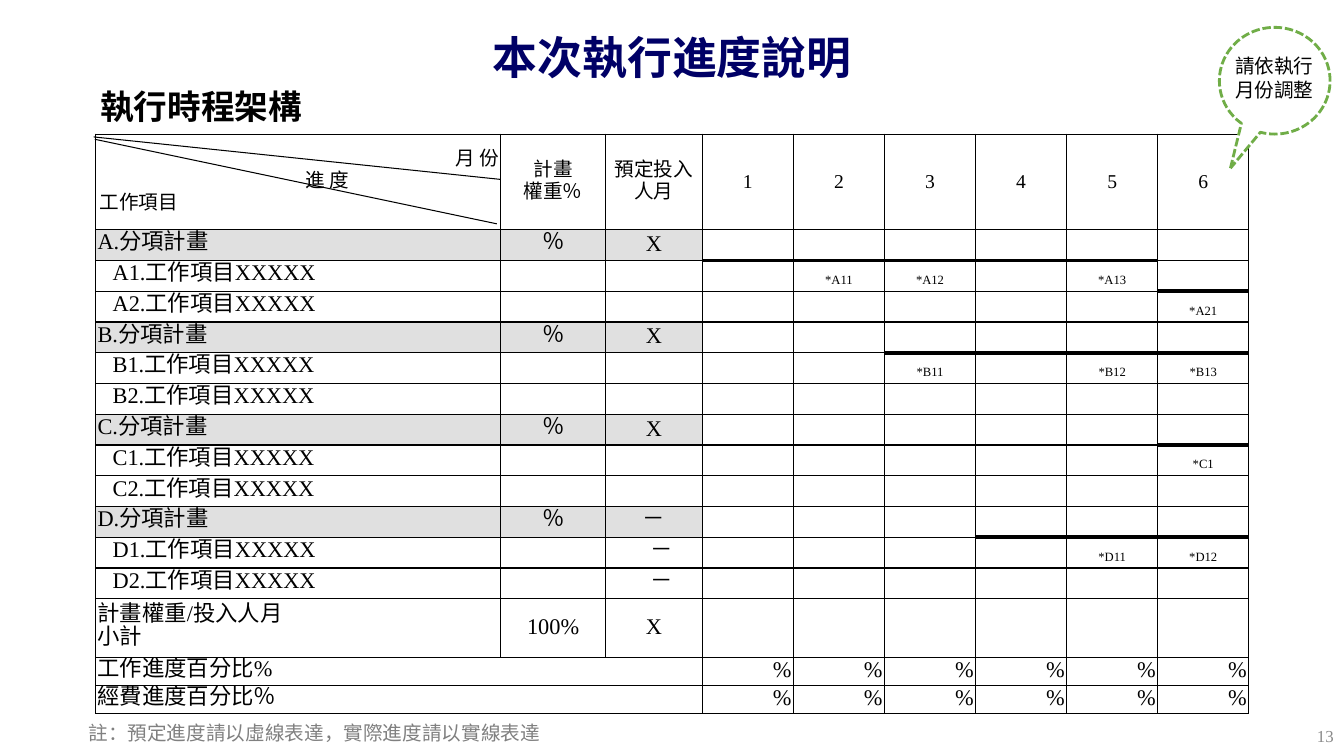
"""Build the project schedule progress slide."""
from dataclasses import dataclass, field

from lxml.etree import SubElement
from pptx import Presentation
from pptx.dml.color import RGBColor
from pptx.enum.dml import MSO_LINE_DASH_STYLE as Dash
from pptx.enum.shapes import MSO_CONNECTOR as Connector, MSO_SHAPE as Preset
from pptx.enum.text import MSO_ANCHOR as Anchor, PP_ALIGN as Align
from pptx.oxml.ns import qn
from pptx.util import Cm, Pt

BLACK = RGBColor(0x00, 0x00, 0x00)
WHITE = RGBColor(0xFF, 0xFF, 0xFF)
NAVY = RGBColor(0x00, 0x00, 0x66)
GREEN = RGBColor(0x70, 0xAD, 0x47)
NOTE_GRAY = RGBColor(0x80, 0x80, 0x80)
NUMBER_GRAY = RGBColor(0x89, 0x89, 0x89)
GROUP_GRAY = RGBColor(0xE0, 0xE0, 0xE0)
SERIF = "Times New Roman"
SANS = "Noto Sans CJK SC"
MONTHS = range(1, 7)
FIRST_MONTH_COLUMN = 3
ITEM_INDENT = 0.38


@dataclass
class Line:
    text: str
    size: float = 16
    align: Align = Align.CENTER
    indent: float = 0
    font: str = SERIF
    color: RGBColor = BLACK
    bold: bool = False


@dataclass
class Caption:
    left: float
    top: float
    width: float
    height: float
    lines: list[Line]
    anchor: Anchor = Anchor.MIDDLE
    wrap: bool = True


@dataclass
class WorkRow:
    label: str
    weight: str = ""
    effort: str = ""
    bar_months: range = range(0)
    checkpoints: dict[int, str] = field(default_factory=dict)


WORK_ROWS = [
    WorkRow("A.分項計畫", "％", "X", range(1, 6)),
    WorkRow("A1.工作項目XXXXX", bar_months=range(6, 7),
            checkpoints={2: "*A11", 3: "*A12", 5: "*A13"}),
    WorkRow("A2.工作項目XXXXX", checkpoints={6: "*A21"}),
    WorkRow("B.分項計畫", "％", "X", range(3, 7)),
    WorkRow("B1.工作項目XXXXX", checkpoints={3: "*B11", 5: "*B12", 6: "*B13"}),
    WorkRow("B2.工作項目XXXXX"),
    WorkRow("C.分項計畫", "％", "X", range(6, 7)),
    WorkRow("C1.工作項目XXXXX", checkpoints={6: "*C1"}),
    WorkRow("C2.工作項目XXXXX"),
    WorkRow("D.分項計畫", "％", "－", range(4, 7)),
    WorkRow("D1.工作項目XXXXX", effort="－", checkpoints={5: "*D11", 6: "*D12"}),
    WorkRow("D2.工作項目XXXXX", effort="－"),
]
SUBTOTAL_ROW = len(WORK_ROWS) + 1
PERCENT_ROWS = ["工作進度百分比%", "經費進度百分比％"]
COLUMN_WIDTHS = [10.21, 2.64, 2.44] + [13.77 / len(MONTHS)] * len(MONTHS)
ROW_HEIGHTS = [2.41] + [9.3 / len(WORK_ROWS)] * len(WORK_ROWS) + [1.47, 0.71, 0.71]

CAPTIONS = [
    Caption(1.7, 0.41, 30.48, 2.01, [Line("本次執行進度說明", 32, color=NAVY, bold=True)]),
    Caption(2.11, 1.93, 5.92, 1.5, [Line("執行時程架構", 24, bold=True)]),
    Caption(25.96, 18.03, 7.9, 1.02, [Line("13", 12, Align.RIGHT, color=NUMBER_GRAY)]),
    Caption(1.98, 18.03, 11.99, 0.86,
            [Line("註：預定進度請以虛線表達，實際進度請以實線表達", 14, Align.LEFT,
                  font=SANS, color=NOTE_GRAY)], Anchor.TOP, False),
]
CALLOUT_CAPTION = Caption(30.4, 1.24, 3.43, 1.45,
                          [Line(text, 14, font=SANS) for text in ("請依執行", "月份調整")],
                          Anchor.TOP)
HEADER_DIAGONALS = [(2.39, 3.51, 12.52, 5.64), (2.36, 3.45, 12.6, 4.52)]


def write_lines(frame, lines: list[Line], spacing: Pt | None = None) -> None:
    """Write each line as one paragraph holding one run."""
    for index, line in enumerate(lines):
        paragraph = frame.add_paragraph() if index else frame.paragraphs[0]
        paragraph.alignment = line.align
        if spacing:
            paragraph.line_spacing = spacing
        if line.indent:
            paragraph._p.get_or_add_pPr().set("indent", str(Cm(line.indent)))
        if not line.text:
            continue
        run = paragraph.add_run()
        run.text = line.text
        run.font.size = Pt(line.size)
        run.font.bold = line.bold
        run.font.color.rgb = line.color
        run.font.name = line.font
        SubElement(run._r.get_or_add_rPr(), qn("a:ea"), typeface=SANS)


def add_caption(shapes, caption: Caption) -> None:
    """Add a text box."""
    frame = shapes.add_textbox(Cm(caption.left), Cm(caption.top), Cm(caption.width),
                               Cm(caption.height)).text_frame
    frame.word_wrap = caption.wrap
    frame.vertical_anchor = caption.anchor
    write_lines(frame, caption.lines)


def cell_lines(row: int, column: int) -> list[Line]:
    """Return the lines shown in one schedule cell."""
    month = column - FIRST_MONTH_COLUMN + 1
    if row == 0:
        headings = [
            [Line("月 份", 14, Align.RIGHT), Line("進 度", 14, indent=1.47),
             Line("工作項目", 14, Align.LEFT, 0.05)],
            [Line("計畫", 14), Line("權重％", 14)],
            [Line("預定投入人月", 14)],
        ]
        return headings[column] if month < 1 else [Line(str(month), 14)]
    if row < SUBTOTAL_ROW:
        work = WORK_ROWS[row - 1]
        indent = 0 if work.weight else ITEM_INDENT
        if month >= 1:
            return [Line(work.checkpoints.get(month, ""), 9)]
        return [[Line(work.label, align=Align.JUSTIFY, indent=indent)],
                [Line(work.weight)], [Line(work.effort, indent=indent)]][column]
    if row == SUBTOTAL_ROW:
        subtotal = [[Line("計畫權重/投入人月", align=Align.JUSTIFY),
                     Line("小計", align=Align.JUSTIFY)], [Line("100%")], [Line("X")]]
        return subtotal[column] if month < 1 else [Line("")]
    if month >= 1:
        return [Line("%", align=Align.RIGHT)]
    label = PERCENT_ROWS[row - SUBTOTAL_ROW - 1] if column == 0 else ""
    return [Line(label, align=Align.JUSTIFY)]


def has_bar_below(row: int, column: int) -> bool:
    """Tell whether a progress bar runs along the bottom of a cell."""
    month = column - FIRST_MONTH_COLUMN + 1
    return 1 <= row < SUBTOTAL_ROW and month in WORK_ROWS[row - 1].bar_months


def set_borders(cell, row: int, column: int) -> None:
    """Draw the grid lines and progress bars around a cell."""
    widths = {"a:lnL": 1, "a:lnR": 1,
              "a:lnT": 3 if has_bar_below(row - 1, column) else 1,
              "a:lnB": 3 if has_bar_below(row, column) else 1}
    for tag, width in widths.items():
        border = SubElement(cell._tc.get_or_add_tcPr(), qn(tag), w=str(Pt(width)))
        SubElement(SubElement(border, qn("a:solidFill")), qn("a:srgbClr"), val=str(BLACK))


def add_schedule(shapes) -> None:
    """Add the schedule table."""
    schedule = shapes.add_table(len(ROW_HEIGHTS), len(COLUMN_WIDTHS), Cm(2.41), Cm(3.38),
                                Cm(sum(COLUMN_WIDTHS)), Cm(sum(ROW_HEIGHTS))).table
    schedule.first_row = schedule.horz_banding = False
    for column, width in zip(schedule.columns, COLUMN_WIDTHS):
        column.width = Cm(width)
    for row, height in enumerate(ROW_HEIGHTS):
        schedule.rows[row].height = Cm(height)
        for column in range(len(COLUMN_WIDTHS)):
            cell = schedule.cell(row, column)
            cell.margin_left = cell.margin_right = Cm(0.05)
            cell.margin_top = cell.margin_bottom = 0
            cell.vertical_anchor = Anchor.MIDDLE
            set_borders(cell, row, column)
            in_group = 1 <= row < SUBTOTAL_ROW and WORK_ROWS[row - 1].weight
            if in_group and column < FIRST_MONTH_COLUMN:
                cell.fill.solid()
                cell.fill.fore_color.rgb = GROUP_GRAY
            else:
                cell.fill.background()
            write_lines(cell.text_frame, cell_lines(row, column), Pt(16))
        if row > SUBTOTAL_ROW:
            schedule.cell(row, 0).merge(schedule.cell(row, FIRST_MONTH_COLUMN - 1))


def add_diagonal(shapes, ends: tuple[float, float, float, float]) -> None:
    """Add one dividing line of the corner heading."""
    diagonal = shapes.add_connector(Connector.STRAIGHT, *map(Cm, ends))
    diagonal.line.color.rgb = BLACK
    diagonal.line.width = Pt(0.75)
    SubElement(diagonal._element.spPr, qn("a:effectLst"))


def add_callout(shapes) -> None:
    """Add the dashed speech bubble with its reminder."""
    reminder = shapes.add_group_shape().shapes
    bubble = reminder.add_shape(Preset.OVAL_CALLOUT, Cm(30.73), Cm(0.69), Cm(2.79), Cm(2.69))
    bubble.adjustments[0], bubble.adjustments[1] = -0.4, 0.82
    bubble.shadow.inherit = False
    bubble.fill.solid()
    bubble.fill.fore_color.rgb = WHITE
    bubble.line.color.rgb = GREEN
    bubble.line.width = Pt(2)
    bubble.line.dash_style = Dash.SQUARE_DOT
    add_caption(reminder, CALLOUT_CAPTION)


def main() -> None:
    """Build and save the slide."""
    deck = Presentation()
    deck.slide_width, deck.slide_height = Cm(33.87), Cm(19.05)
    shapes = deck.slides.add_slide(deck.slide_layouts[6]).shapes
    for caption in CAPTIONS:
        add_caption(shapes, caption)
    add_schedule(shapes)
    for ends in HEADER_DIAGONALS:
        add_diagonal(shapes, ends)
    add_callout(shapes)
    deck.save("out.pptx")


if __name__ == "__main__":
    main()
